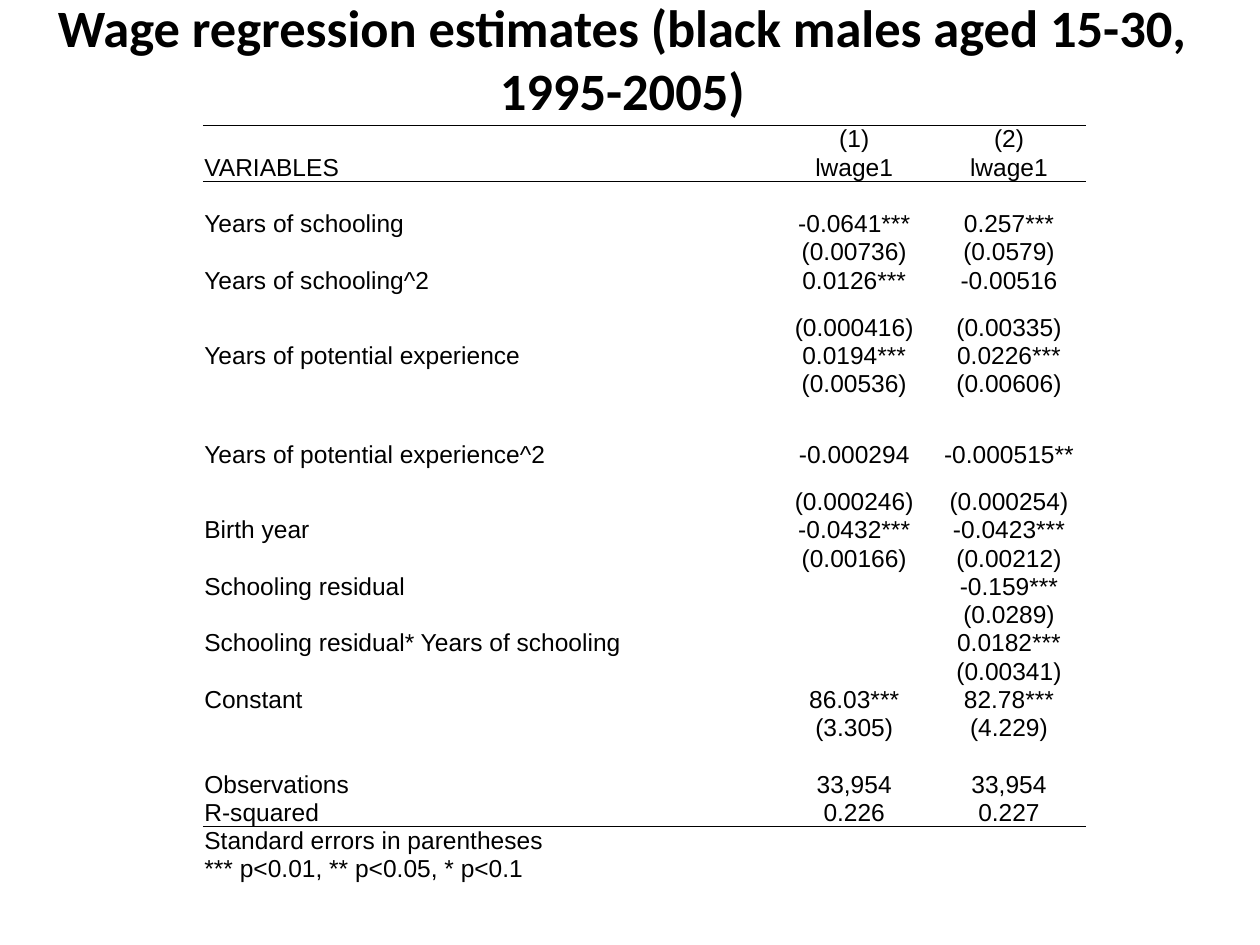
"""Build a slide with a table of wage regression estimates."""
from lxml.etree import SubElement
from pptx import Presentation
from pptx.dml.color import RGBColor
from pptx.enum.text import MSO_ANCHOR as Anchor, MSO_AUTO_SIZE as AutoSize, PP_ALIGN as Align
from pptx.oxml.ns import qn
from pptx.util import Cm, Pt

COLORS = {"ink": "000000"}
TITLE = "Wage regression estimates (black males aged 15-30, 1995-2005)"
ROWS = [
    ("", "(1)", "(2)"),
    ("VARIABLES", "lwage1", "lwage1"),
    ("", "", ""),
    ("Years of schooling", "-0.0641***", "0.257***"),
    ("", "(0.00736)", "(0.0579)"),
    ("Years of schooling^2", "0.0126***", "-0.00516"),
    ("", "(0.000416)", "(0.00335)"),
    ("Years of potential experience", "0.0194***", "0.0226***"),
    ("", "(0.00536)", "(0.00606)"),
    ("Years of potential experience^2", "-0.000294", "-0.000515**"),
    ("", "(0.000246)", "(0.000254)"),
    ("Birth year", "-0.0432***", "-0.0423***"),
    ("", "(0.00166)", "(0.00212)"),
    ("Schooling residual", "", "-0.159***"),
    ("", "", "(0.0289)"),
    ("Schooling residual* Years of schooling", "", "0.0182***"),
    ("", "", "(0.00341)"),
    ("Constant", "86.03***", "82.78***"),
    ("", "(3.305)", "(4.229)"),
    ("", "", ""),
    ("Observations", "33,954", "33,954"),
    ("R-squared", "0.226", "0.227"),
    ("Standard errors in parentheses", "", ""),
    ("*** p<0.01, ** p<0.05, * p<0.1", "", ""),
]
COLUMN_WIDTHS = (11.57, 3.12, 3.12)
ROW_HEIGHT = 0.57
TALL_ROWS = {6: 0.95, 9: 1.43, 10: 0.95}
RULED_ROWS = (0, 2, 22)


def write_text(frame, text, size, font, align, bold=False):
    """Write one formatted paragraph, keeping size and font even when it is empty."""
    para = frame.paragraphs[0]
    para.alignment = align
    if not text:
        ending = SubElement(para._p, qn("a:endParaRPr"), sz=str(size * 100))
        SubElement(ending, qn("a:latin"), typeface=font)
        return
    span = para.add_run()
    span.text = text
    span.font.size = Pt(size)
    span.font.name = font
    span.font.bold = bold
    span.font.color.rgb = RGBColor.from_string(COLORS["ink"])


def set_borders(cell, ruled_sides):
    """Draw thin borders on the ruled sides of a cell and clear the others."""
    properties = cell._tc.get_or_add_tcPr()
    for side in ("lnL", "lnR", "lnT", "lnB"):
        line = SubElement(properties, qn(f"a:{side}"), w=str(Pt(0.5)))
        if side in ruled_sides:
            SubElement(SubElement(line, qn("a:solidFill")), qn("a:srgbClr"), val=COLORS["ink"])
        else:
            SubElement(line, qn("a:noFill"))


def fill_cell(cell, text, row, column):
    """Set the text, insets and borders of one table cell."""
    cell.margin_left = cell.margin_right = Cm(0.03)
    cell.margin_top = Cm(0.01)
    cell.margin_bottom = 0
    cell.vertical_anchor = Anchor.BOTTOM
    write_text(cell.text_frame, text, size=14, font="Arial",
               align=Align.CENTER if column else Align.LEFT)
    edges = {"lnT": row, "lnB": row + 1}
    set_borders(cell, [side for side, edge in edges.items() if edge in RULED_ROWS])
    cell.fill.background()


def add_title(page):
    """Place the slide title."""
    box = page.shapes.title
    box.left, box.top, box.width, box.height = Cm(0), Cm(0), Cm(25.1), Cm(2.34)
    frame = box.text_frame
    frame.auto_size = AutoSize.NONE
    frame.word_wrap = True
    frame.vertical_anchor = Anchor.MIDDLE
    write_text(frame, TITLE, size=30, font="Calibri", align=Align.CENTER, bold=True)


def add_estimates(page):
    """Add the table of regression estimates."""
    heights = [TALL_ROWS.get(row, ROW_HEIGHT) for row in range(len(ROWS))]
    table = page.shapes.add_table(
        len(ROWS), len(COLUMN_WIDTHS), Cm(4.09), Cm(2.52),
        Cm(sum(COLUMN_WIDTHS)), Cm(sum(heights))).table
    table.first_row = table.horz_banding = False
    for column, width in zip(table.columns, COLUMN_WIDTHS):
        column.width = Cm(width)
    for row, (texts, height) in enumerate(zip(ROWS, heights)):
        table.rows[row].height = Cm(height)
        for column, text in enumerate(texts):
            fill_cell(table.cell(row, column), text, row, column)


def main():
    """Build and save the deck."""
    deck = Presentation()
    deck.slide_width, deck.slide_height = Cm(25.4), Cm(19.05)
    page = deck.slides.add_slide(deck.slide_layouts[5])
    add_title(page)
    add_estimates(page)
    deck.save("out.pptx")


if __name__ == "__main__":
    main()
